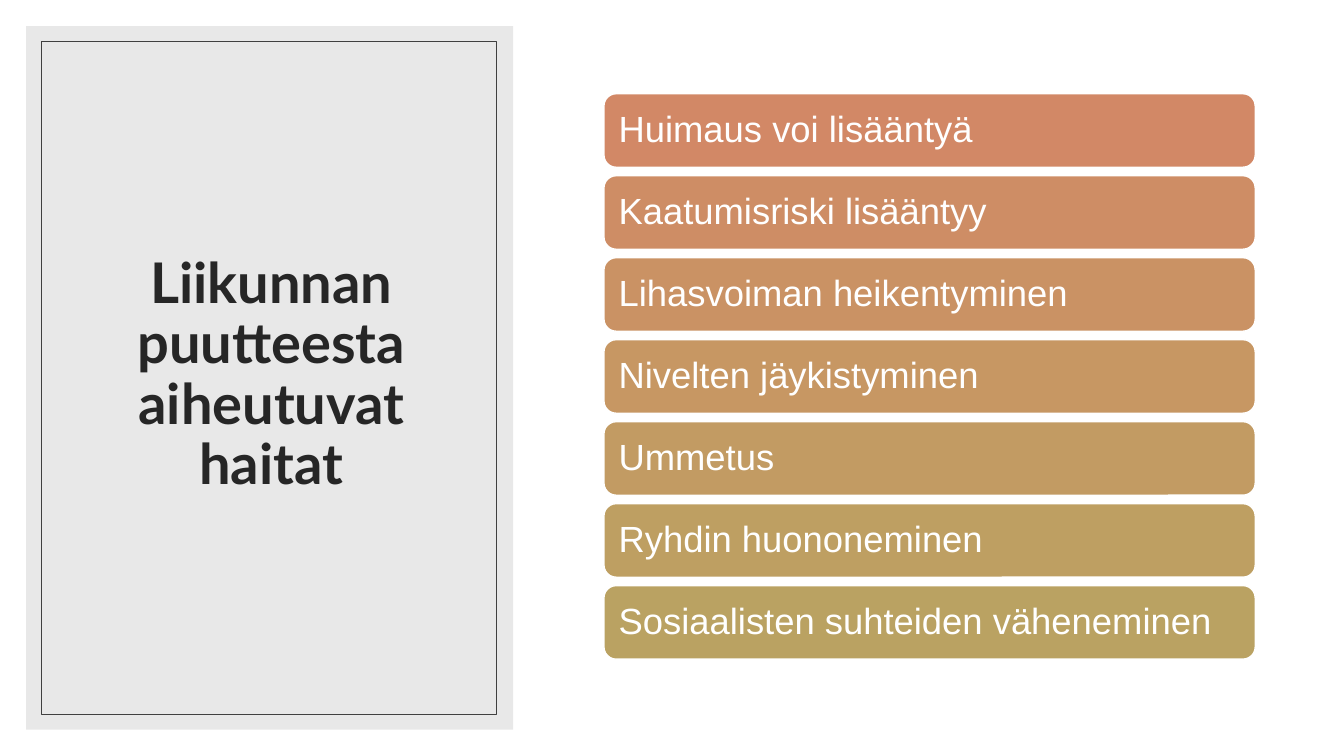
import pptx
import pptx.util
import pptx.dml.color
import pptx.enum.shapes
import pptx.enum.text

RGB = pptx.dml.color.RGBColor
SHAPE = pptx.enum.shapes.MSO_SHAPE
ALIGN = pptx.enum.text.PP_ALIGN
PX = 9144

WHITE = RGB(0xFF, 0xFF, 0xFF)
PANEL = RGB(0xE8, 0xE8, 0xE8)
FRAME = RGB(0x40, 0x40, 0x40)
INK = RGB(0x26, 0x26, 0x26)

TITLE = "Liikunnan puutteesta aiheutuvat haitat"
HARMS = [
    ("Huimaus voi lisääntyä", RGB(0xD2, 0x88, 0x66)),
    ("Kaatumisriski lisääntyy", RGB(0xCE, 0x8D, 0x65)),
    ("Lihasvoiman heikentyminen", RGB(0xCA, 0x92, 0x64)),
    ("Nivelten jäykistyminen", RGB(0xC7, 0x97, 0x63)),
    ("Ummetus", RGB(0xC2, 0x9B, 0x63)),
    ("Ryhdin huononeminen", RGB(0xBE, 0x9F, 0x62)),
    ("Sosiaalisten suhteiden väheneminen", RGB(0xBA, 0xA2, 0x62)),
]


def emu(*sizes):
    """Turn px lengths into whole EMU."""
    return [round(size * PX) for size in sizes]


def draw(slide, kind, box, fill=None, line=None, width=1):
    """Add a preset shape with the given fill and line."""
    shape = slide.shapes.add_shape(kind, *emu(*box))
    shape.shadow.inherit = False
    if fill is None:
        shape.fill.background()
    else:
        shape.fill.solid()
        shape.fill.fore_color.rgb = fill
    if line is None:
        shape.line.fill.background()
    else:
        shape.line.color.rgb = line
        shape.line.width = pptx.util.Pt(width)
    return shape


def write(shape, text, face, size, color, align, inset, bold=False):
    """Set one centred-height paragraph in a shape."""
    frame = shape.text_frame
    frame.word_wrap = True
    frame.vertical_anchor = pptx.enum.text.MSO_ANCHOR.MIDDLE
    frame.margin_left, frame.margin_right = emu(inset, inset)
    frame.margin_top, frame.margin_bottom = emu(5, 5)
    para = frame.paragraphs[0]
    para.alignment = align
    para.line_spacing = 0.9
    run = para.add_run()
    run.text = text
    run.font.name = face
    run.font.size = pptx.util.Pt(size)
    run.font.bold = bold
    run.font.color.rgb = color


def panel(slide, box):
    """Place the grey title panel with its inner frame."""
    left, top, wide, high = box
    draw(slide, SHAPE.RECTANGLE, box, PANEL)
    label = slide.shapes.add_textbox(
        *emu(left + 37, top + 35, wide - 71, high - 74))
    write(label, TITLE, "Lato", 40, INK, ALIGN.CENTER, 10, True)
    inner = (left + 15, top + 15, wide - 32, high - 30)
    draw(slide, SHAPE.RECTANGLE, inner, None, FRAME, 0.5)


def harms(slide, box):
    """Stack the bars evenly over the box."""
    left, top, wide, high = box
    bar = 73
    step = (high - bar) / (len(HARMS) - 1)
    for row, (text, fill) in enumerate(HARMS):
        place = (left, top + row * step, wide, bar)
        shape = draw(slide, SHAPE.ROUNDED_RECTANGLE, place, fill, WHITE)
        write(shape, text, "Arial", 26, WHITE, ALIGN.LEFT, 11)


def main():
    """Build and save the slide."""
    deck = pptx.Presentation()
    deck.slide_width, deck.slide_height = emu(1333, 750)
    slide = deck.slides.add_slide(deck.slide_layouts[6])
    panel(slide, (26, 26, 483, 698))
    harms(slide, (599, 93, 646, 561))
    deck.save("out.pptx")


if __name__ == "__main__":
    main()
